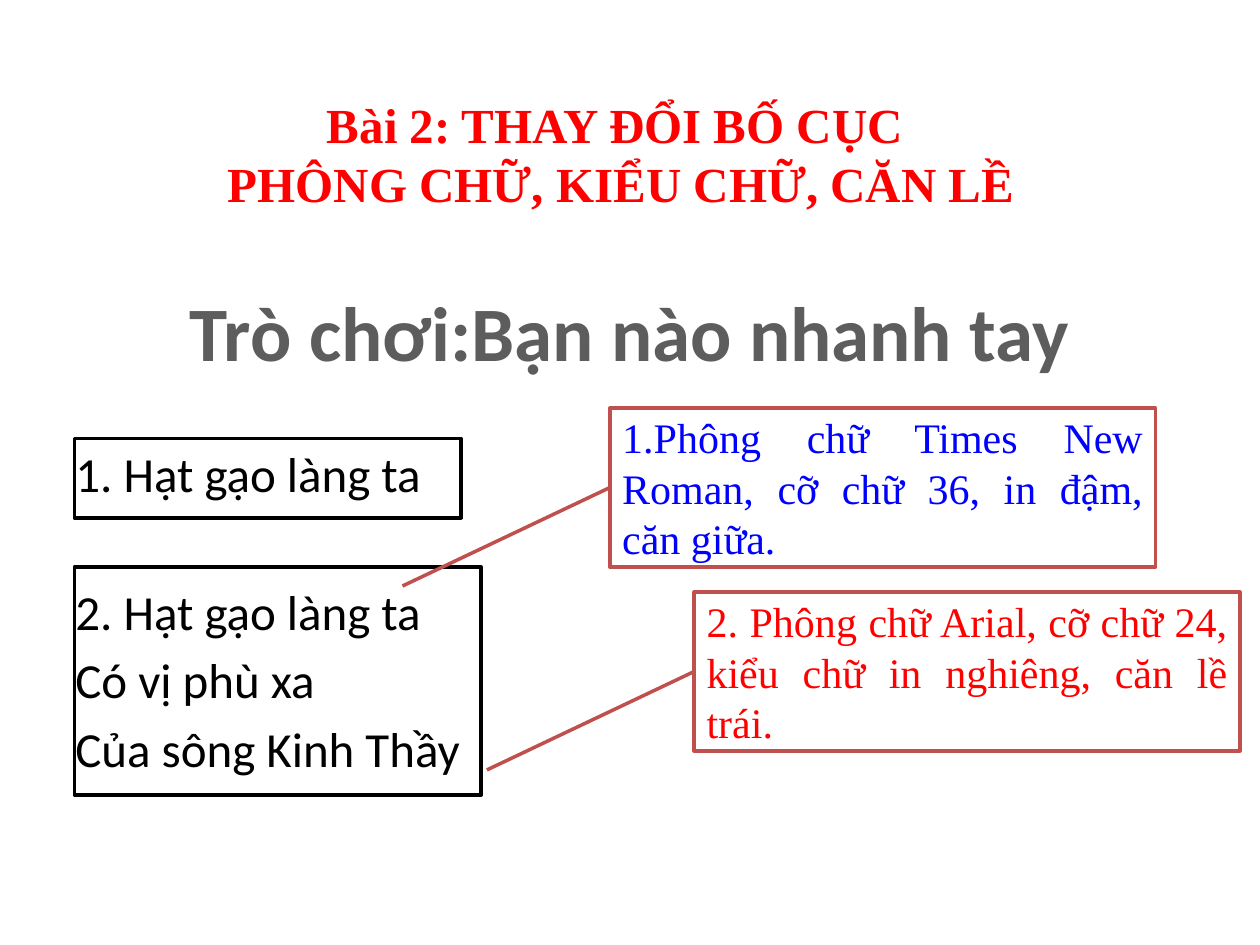
"""Build the lesson slide on fonts, type styles and alignment."""
from pptx import Presentation
from pptx.dml.color import RGBColor
from pptx.enum.shapes import MSO_SHAPE
from pptx.enum.text import MSO_ANCHOR, PP_ALIGN
from pptx.util import Inches, Pt

RECTANGLE, CALLOUT = MSO_SHAPE.RECTANGLE, MSO_SHAPE.LINE_CALLOUT_1
CENTER, JUSTIFY, LEFT = PP_ALIGN.CENTER, PP_ALIGN.JUSTIFY, PP_ALIGN.LEFT
TOP, MIDDLE = MSO_ANCHOR.TOP, MSO_ANCHOR.MIDDLE
SANS, SERIF = "Calibri", "Times New Roman"
COLORS = {"black": "000000", "gray": "5D5D5D", "white": "FFFFFF",
          "red": "FF0000", "blue": "0000FF", "border": "C0504D"}

TITLE = "Trò chơi:Bạn nào nhanh tay"
LESSON = ["Bài 2: THAY ĐỔI BỐ CỤC", " PHÔNG CHỮ, KIỂU CHỮ, CĂN LỀ"]
POEM = [("1. Hạt gạo làng ta", 0), ("2. Hạt gạo làng ta", 45),
        ("Có vị phù xa", 5.6), ("Của sông Kinh Thầy", 5.6)]
FRAMES = [(0.59, 3.48, 3.07, 0.63), (0.59, 4.5, 3.23, 1.81)]
CALLOUTS = [
    ("1.Phông chữ Times New Roman, cỡ chữ 36, in đậm, căn giữa.", "blue", 4.84, 3.24),
    ("2. Phông chữ Arial, cỡ chữ 24, kiểu chữ in nghiêng, căn lề trái.", "red", 5.51, 4.7),
]
CALLOUT_SIZE = (4.33, 1.26)
POINTER = (0.5, 0, 1.12, -0.38)


def color(name):
    return RGBColor.from_string(COLORS[name])


def write(shape, lines, font, size, tint, align, anchor, bold=False):
    frame = shape.text_frame
    frame.word_wrap = True
    frame.vertical_anchor = anchor
    frame.text = "\n".join(lines)
    for paragraph in frame.paragraphs:
        paragraph.alignment = align
        for run in paragraph.runs:
            run.font.name, run.font.size, run.font.bold = font, Pt(size), bold
            run.font.color.rgb = color(tint)


def add_outlined(slide, kind, box, line):
    shape = slide.shapes.add_shape(kind, *map(Inches, box))
    shape.shadow.inherit = False
    shape.fill.background()
    shape.line.color.rgb = color(line)
    shape.line.width = Pt(2)
    return shape


def main():
    presentation = Presentation()
    presentation.slide_width, presentation.slide_height = Inches(10), Inches(7.5)
    slide = presentation.slides.add_slide(presentation.slide_layouts[5])

    title = slide.shapes.title
    title.left, title.top, title.width, title.height = map(Inches, (0.5, 2, 9, 1.25))
    write(title, [TITLE], SANS, 44, "gray", CENTER, MIDDLE, bold=True)

    poem = slide.shapes.add_textbox(*map(Inches, (0.5, 3.47, 4.42, 4)))
    write(poem, [line for line, _ in POEM], SANS, 28, "black", LEFT, TOP)
    for paragraph, (_, gap) in zip(poem.text_frame.paragraphs, POEM):
        paragraph.space_before = Pt(gap)

    for box in FRAMES:
        add_outlined(slide, RECTANGLE, box, "black")

    for text, tint, left, top in CALLOUTS:
        callout = add_outlined(slide, CALLOUT, (left, top, *CALLOUT_SIZE), "border")
        callout.fill.solid()
        callout.fill.fore_color.rgb = color("white")
        for index, value in enumerate(POINTER):
            callout.adjustments[index] = value
        write(callout, [text], SERIF, 24, tint, JUSTIFY, MIDDLE)

    lesson = slide.shapes.add_textbox(*map(Inches, (0.62, 0.7, 8.52, 1.04)))
    write(lesson, LESSON, SERIF, 28, "red", CENTER, TOP, bold=True)
    presentation.save("out.pptx")


if __name__ == "__main__":
    main()
